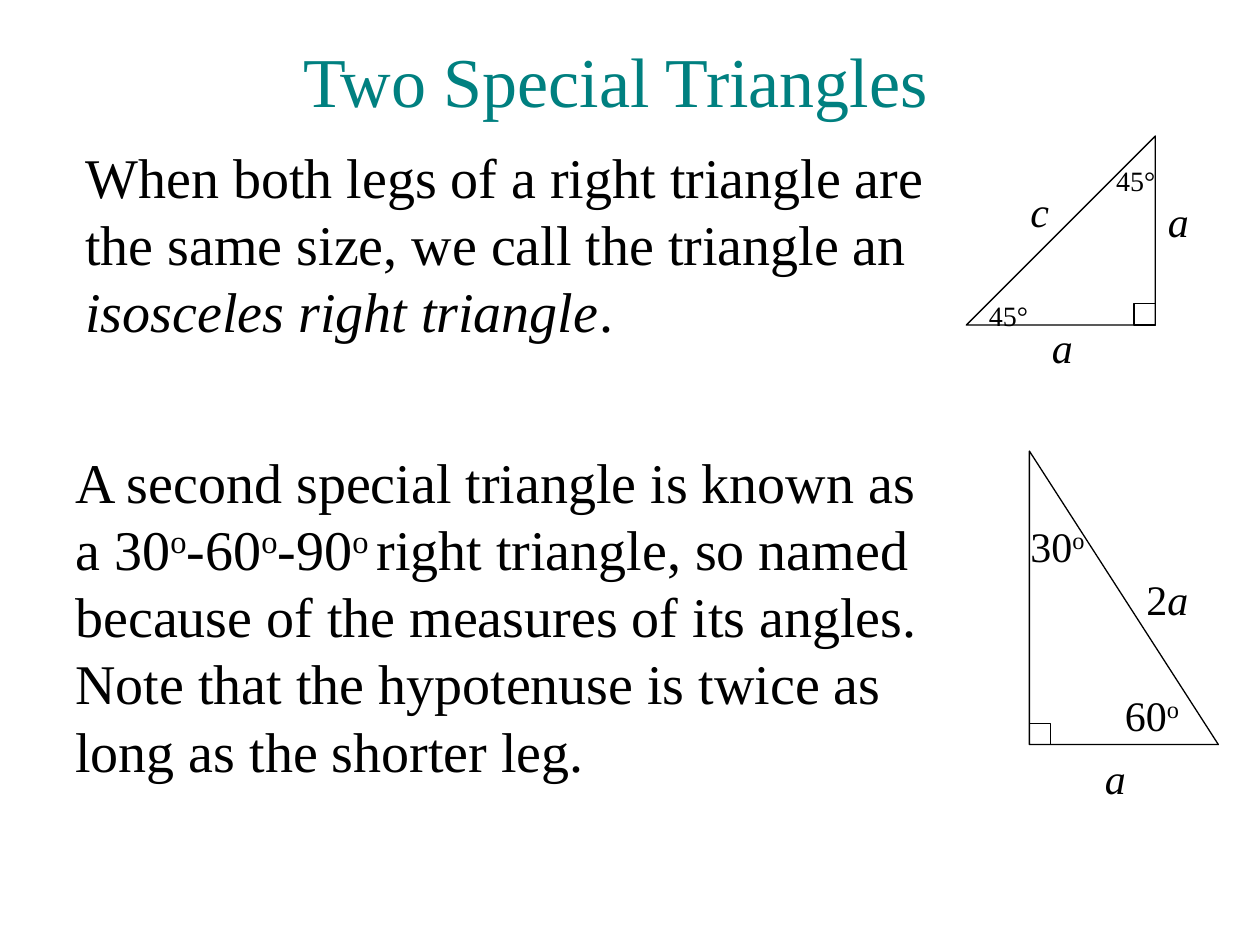
import pptx
import pptx.dml.color
import pptx.enum.shapes
import pptx.enum.text
import pptx.util

Inches = pptx.util.Inches
MSO_SHAPE = pptx.enum.shapes.MSO_SHAPE
PP_ALIGN = pptx.enum.text.PP_ALIGN
MARK = 0.17


def rgb(color):
    return pptx.dml.color.RGBColor.from_string(color)


def add_text(s, text, left, top, width, height, size=24, color="000000",
             align=PP_ALIGN.LEFT, right_inset=0):
    sp = s.shapes.add_textbox(Inches(left), Inches(top), Inches(width), Inches(height))
    tf = sp.text_frame
    tf.word_wrap = True
    tf.margin_right = Inches(right_inset)
    p = tf.paragraphs[0]
    p.alignment = align
    runs = [(text, "")] if isinstance(text, str) else text
    for content, style in runs:
        r = p.add_run()
        r.text = content
        r.font.name = "Times New Roman"
        r.font.size = pptx.util.Pt(size)
        r.font.color.rgb = rgb(color)
        if style == "italic":
            r.font.italic = True
        elif style == "super":
            r.font._element.set("baseline", "30000")
    return sp


def add_outline(s, kind, left, top, width, height):
    sp = s.shapes.add_shape(kind, Inches(left), Inches(top), Inches(width), Inches(height))
    sp.shadow.inherit = False
    sp.fill.background()
    sp.line.color.rgb = rgb("000000")
    sp.line.width = pptx.util.Pt(0.75)
    return sp


def add_right_triangle(s, left, top, width, height, flipped=False):
    sp = add_outline(s, MSO_SHAPE.RIGHT_TRIANGLE, left, top, width, height)
    if flipped:
        sp._element.spPr.xfrm.set("flipH", "1")
    mark_left = left + width - MARK if flipped else left
    add_outline(s, MSO_SHAPE.RECTANGLE, mark_left, top + height - MARK, MARK, MARK)


def add_label(s, text, left, top):
    add_text(s, text, left, top, 0.75, 0.5)


def add_angle(s, left, top):
    add_text(s, "45°", left, top, 0.8, 0.37, size=16)


def main():
    prs = pptx.Presentation()
    prs.slide_width, prs.slide_height = Inches(10), Inches(7.5)
    s = prs.slides.add_slide(prs.slide_layouts[6])
    side = [("a", "italic")]
    degree = ("o", "super")

    add_text(s, "Two Special Triangles", 0.92, 0.25, 7.83, 0.77, size=40,
             color="008080", align=PP_ALIGN.CENTER)

    add_text(s, [("When both legs of a right triangle are the same size, "
                  "we call the triangle an ", ""),
                 ("isosceles right triangle", "italic"), (".", "")],
             0.58, 1.08, 7.17, 1.72, size=32, right_inset=0.1)
    add_right_triangle(s, 7.67, 1.08, 1.5, 1.5, flipped=True)
    add_label(s, [("c", "italic")], 8.08, 1.42)
    add_label(s, side, 8.25, 2.5)
    add_label(s, side, 9.17, 1.5)
    add_angle(s, 8.76, 1.25)
    add_angle(s, 7.75, 2.32)

    add_text(s, [("A second special triangle is known as a 30", ""), degree,
                 ("-60", ""), degree, ("-90", ""), ("o ", "super"),
                 ("right triangle, so named because of the measures of its angles. "
                  "Note that the hypotenuse is twice as long as the shorter leg.", "")],
             0.5, 3.5, 7.08, 3.6, size=32, right_inset=0.1)
    add_right_triangle(s, 8.17, 3.58, 1.5, 2.33)
    add_label(s, side, 8.67, 5.92)
    add_label(s, [("2", "")] + side, 9, 4.5)
    add_label(s, [("60", ""), degree], 8.83, 5.42)
    add_label(s, [("30", ""), degree], 8.08, 4.08)

    prs.save("out.pptx")


if __name__ == "__main__":
    main()
